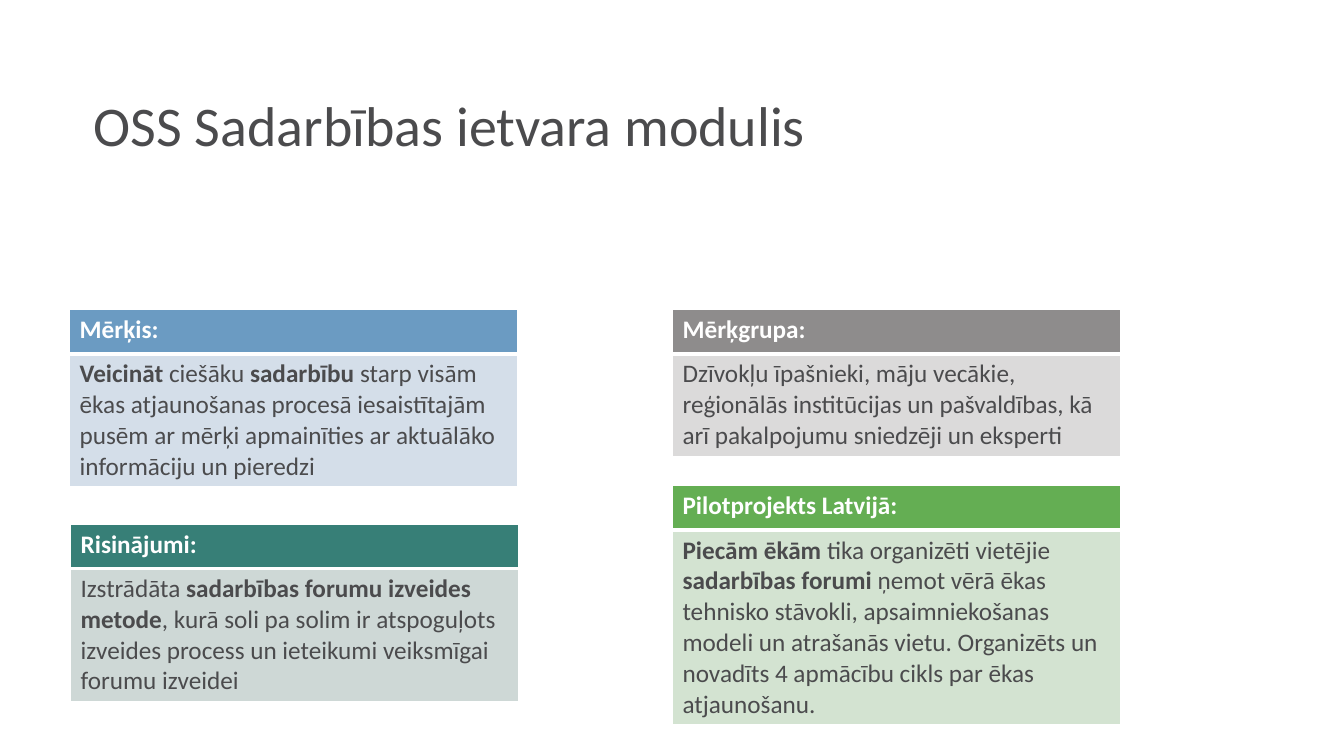
import pptx
import pptx.util
import pptx.dml.color
import pptx.enum.text
import lxml.etree
from pptx.util import Inches, Pt
from pptx.dml.color import RGBColor

INK = RGBColor(0x4B, 0x4B, 0x4D)
WHITE = RGBColor(0xFF, 0xFF, 0xFF)
BLUE, PALE_BLUE = RGBColor(0x6B, 0x9B, 0xC2), RGBColor(0xD4, 0xDE, 0xE9)
GREY, PALE_GREY = RGBColor(0x8E, 0x8C, 0x8C), RGBColor(0xDB, 0xDA, 0xDA)
TEAL, PALE_TEAL = RGBColor(0x37, 0x7F, 0x77), RGBColor(0xCE, 0xD8, 0xD6)
GREEN, PALE_GREEN = RGBColor(0x64, 0xAE, 0x53), RGBColor(0xD3, 0xE3, 0xD1)

WIDTH = 4.44
HEAD = 0.44


def write(frame, text, size=18, color=INK):
    """Fill a text frame; words between * marks are bold."""
    line = frame.paragraphs[0]
    line.alignment = pptx.enum.text.PP_ALIGN.LEFT
    for i, part in enumerate(text.split("*")):
        if part:
            run = line.add_run()
            run.text = part
            run.font.name = "Calibri"
            run.font.size = Pt(size)
            run.font.bold = i % 2 == 1
            run.font.color.rgb = color
    return line


def edge(cell, **widths):
    """Draw white cell borders, with widths in points by side."""
    props = cell._tc.get_or_add_tcPr()
    for i, side in enumerate("LRTB"):
        tag = pptx.oxml.ns.qn("a:ln" + side)
        line = lxml.etree.Element(tag, w=str(Pt(widths.get(side, 1))))
        fill = lxml.etree.SubElement(line, pptx.oxml.ns.qn("a:solidFill"))
        lxml.etree.SubElement(fill, pptx.oxml.ns.qn("a:srgbClr"), val=str(WHITE))
        props.insert(i, line)


deck = pptx.Presentation()
deck.slide_width = Inches(13.33)
deck.slide_height = Inches(7.5)
slide = deck.slides.add_slide(deck.slide_layouts[5])

# Title
title = slide.shapes.title
title.left, title.top = Inches(0.83), Inches(0.38)
title.width, title.height = Inches(9.68), Inches(1.78)
title.text_frame.word_wrap = True
title.text_frame.vertical_anchor = pptx.enum.text.MSO_ANCHOR.MIDDLE
write(title.text_frame, "OSS Sadarbības ietvara modulis", size=40).line_spacing = 0.9

# Cards: left, top, height, head colour, body colour, head, body
cards = [
    (0.69, 3.07, 1.74, BLUE, PALE_BLUE, "Mērķis:",
     "*Veicināt *ciešāku *sadarbību* starp visām ēkas atjaunošanas procesā "
     "iesaistītajām pusēm ar mērķi apmainīties ar aktuālāko informāciju un pieredzi"),
    (6.67, 3.07, 1.44, GREY, PALE_GREY, "Mērķgrupa:",
     "Dzīvokļu īpašnieki, māju vecākie, reģionālās institūcijas un pašvaldības, "
     "kā arī pakalpojumu sniedzēji un eksperti"),
    (0.7, 5.2, 1.74, TEAL, PALE_TEAL, "Risinājumi:",
     "Izstrādāta *sadarbības forumu izveides metode*, kurā soli pa solim ir "
     "atspoguļots izveides process un ieteikumi veiksmīgai forumu izveidei"),
    (6.67, 4.82, 2.34, GREEN, PALE_GREEN, "Pilotprojekts Latvijā:",
     "*Piecām ēkām *tika organizēti vietējie *sadarbības forumi *ņemot vērā ēkas "
     "tehnisko stāvokli, apsaimniekošanas modeli un atrašanās vietu. Organizēts un "
     "novadīts 4 apmācību cikls par ēkas atjaunošanu."),
]
for left, top, height, dark, pale, head, body in cards:
    table = slide.shapes.add_table(
        2, 1, Inches(left), Inches(top), Inches(WIDTH), Inches(height)).table
    table.rows[0].height = Inches(HEAD)
    table.rows[1].height = Inches(height - HEAD)
    rows = [(f"*{head}*", WHITE, dark, {"B": 3}), (body, INK, pale, {"T": 3})]
    for i, (text, color, fill, sides) in enumerate(rows):
        cell = table.cell(i, 0)
        cell.fill.solid()
        cell.fill.fore_color.rgb = fill
        edge(cell, **sides)
        write(cell.text_frame, text, color=color)

deck.save("out.pptx")
